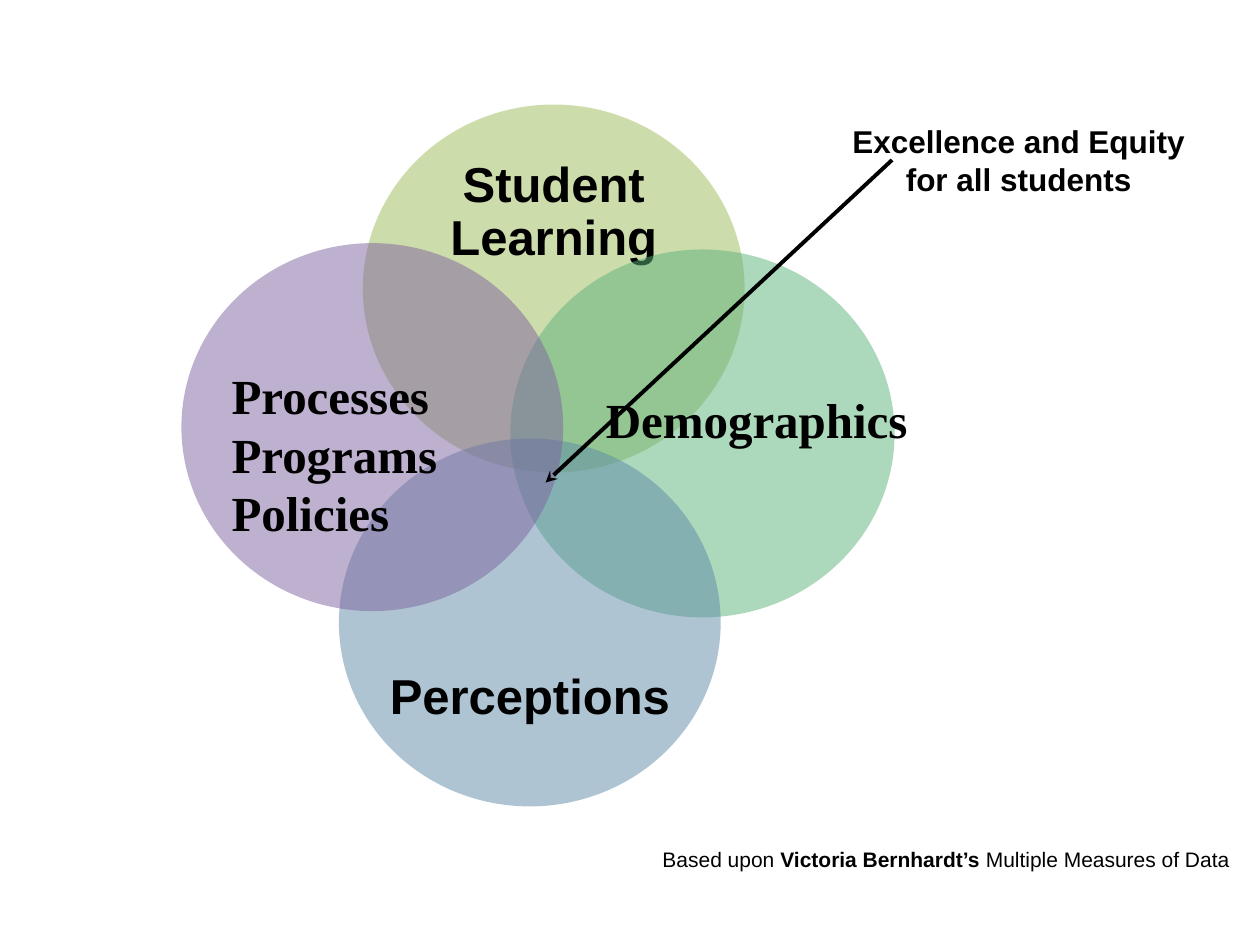
from lxml import etree
from pptx import Presentation
from pptx.dml.color import RGBColor
from pptx.enum.shapes import MSO_CONNECTOR, MSO_SHAPE
from pptx.enum.text import MSO_ANCHOR, PP_ALIGN
from pptx.oxml.ns import qn
from pptx.util import Inches, Pt

OVAL = MSO_SHAPE.OVAL
STRAIGHT = MSO_CONNECTOR.STRAIGHT
LEFT, CENTER = PP_ALIGN.LEFT, PP_ALIGN.CENTER
TOP, MIDDLE = MSO_ANCHOR.TOP, MSO_ANCHOR.MIDDLE

COLORS = {
    "learning": "9BBB59",
    "demographics": "5BB27B",
    "perceptions": "5F8AA9",
    "processes": "7F63A1",
    "ink": "000000",
}
SANS, SERIF = "Arial", "Times New Roman"
CIRCLE_HEIGHT = 2.92


def color(name):
    return RGBColor.from_string(COLORS[name])


def add_circle(page, name, left, top, width=3.03):
    """Half-transparent circle of the diagram."""
    circle = page.shapes.add_shape(
        OVAL, Inches(left), Inches(top), Inches(width), Inches(CIRCLE_HEIGHT))
    circle.shadow.inherit = False
    circle.fill.solid()
    circle.fill.fore_color.rgb = color(name)
    circle.line.fill.background()
    tint = circle.fill._xPr.find(qn("a:solidFill"))[0]
    etree.SubElement(tint, qn("a:alpha"), val="50000")


def add_text(page, area, paragraphs, size, font=SANS, align=LEFT):
    """Text box; each paragraph is a list of (text, bold) spans."""
    box = page.shapes.add_textbox(*map(Inches, area))
    frame = box.text_frame
    frame.word_wrap = True
    for index, spans in enumerate(paragraphs):
        para = frame.paragraphs[0] if index == 0 else frame.add_paragraph()
        para.alignment = align
        for text, bold in spans:
            span = para.add_run()
            span.text = text
            formats = {"name": font, "size": Pt(size), "bold": bold}
            for key, value in formats.items():
                setattr(span.font, key, value)
            span.font.color.rgb = color("ink")
    return frame


def add_circle_label(page, left, top, text):
    """Centred label without margins, set inside a circle."""
    frame = add_text(page, (left, top, 2.33, 0.93), [[(text, True)]], 28,
                     align=CENTER)
    frame.vertical_anchor = MIDDLE
    for side in ("left", "top", "right", "bottom"):
        setattr(frame, f"margin_{side}", 0)
    para = frame.paragraphs[0]
    para.line_spacing = 0.9
    para.space_after = Pt(9.8)


def add_arrow(page, start, end):
    arrow = page.shapes.add_connector(STRAIGHT, *map(Inches, start + end))
    arrow.line.color.rgb = color("ink")
    arrow.line.width = Pt(2.25)
    etree.SubElement(arrow.line._get_or_add_ln(), qn("a:tailEnd"),
                     type="stealth")
    etree.SubElement(arrow._element.spPr, qn("a:effectLst"))


def main():
    deck = Presentation()
    deck.slide_width, deck.slide_height = Inches(10), Inches(7.5)
    page = deck.slides.add_slide(deck.slide_layouts[6])

    # Overlapping circles, from back to front
    add_circle(page, "learning", 2.88, 0.83)
    add_circle_label(page, 3.23, 1.23, "Student Learning")
    add_circle(page, "demographics", 4.05, 1.98, 3.05)
    add_circle(page, "perceptions", 2.69, 3.48)
    add_circle_label(page, 3.04, 5.08, "Perceptions")
    add_circle(page, "processes", 1.44, 1.93)

    # Labels over the side circles
    add_text(page, (1.74, 2.85, 2.17, 1.51),
             [[("Processes Programs", True)], [("Policies", True)]], 28, SERIF)
    add_text(page, (4.71, 3.04, 2.66, 0.57), [[("Demographics", True)]],
             28, SERIF)

    # Source line
    add_text(page, (5.16, 6.67, 4.84, 0.3),
             [[("Based upon ", False), ("Victoria Bernhardt’s ", True),
               ("Multiple Measures of Data", False)]], 12)

    # Callout for the shared centre
    add_text(page, (6.17, 0.92, 3.83, 0.71),
             [[("Excellence and Equity", True)],
              [("for all students", True)]], 18, align=CENTER)
    add_arrow(page, (7.08, 1.27), (4.33, 3.83))

    deck.save("out.pptx")


if __name__ == "__main__":
    main()
